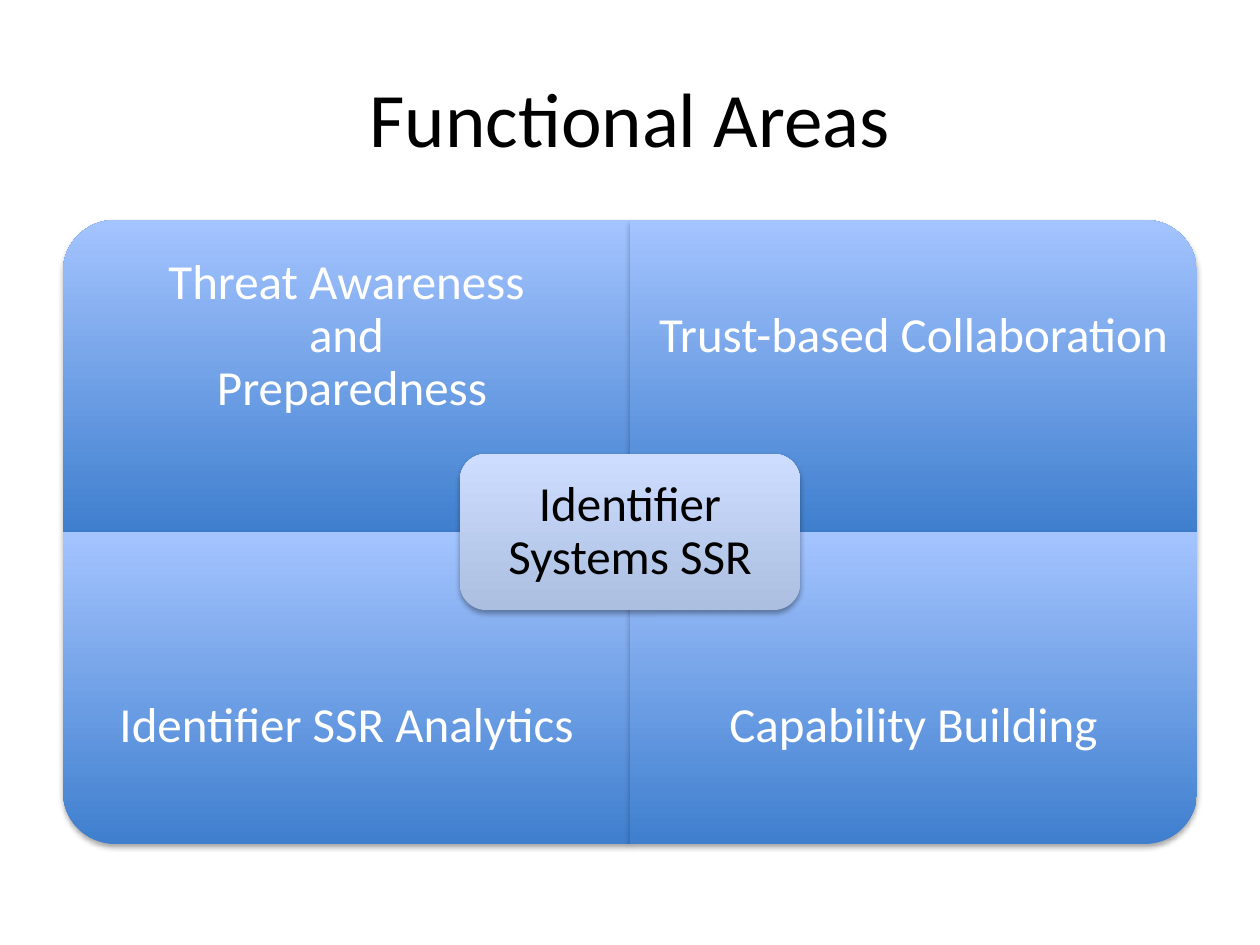
from lxml.etree import SubElement
from pptx import Presentation
from pptx.dml.color import RGBColor
from pptx.enum.shapes import MSO_SHAPE as Shape
from pptx.enum.text import MSO_ANCHOR as Anchor, PP_ALIGN as Align
from pptx.oxml.ns import qn
from pptx.util import Emu, Pt

PX = 914400 / 126
WHITE, BLACK = "FFFFFF", "000000"
QUADRANTS = [
    (0, 0, 270, ["Threat Awareness", "and", " Preparedness"]),
    (1, 0, 0, ["Trust-based Collaboration"]),
    (0, 1, 180, ["Identifier SSR Analytics"]),
    (1, 1, 90, ["Capability Building"]),
]


def px(length):
    """Turn pixels into EMU."""
    return Emu(round(length * PX))


def color(value):
    """Turn a hex string into a colour."""
    return RGBColor.from_string(value)


def add_text(slide, box, lines, size, ink, inset, spacing=1.0):
    """Place centred text, one run per line, in the box."""
    frame = slide.shapes.add_textbox(*map(px, box)).text_frame
    frame.word_wrap = True
    frame.vertical_anchor = Anchor.MIDDLE
    frame.margin_left = frame.margin_right = px(inset)
    frame.margin_top = frame.margin_bottom = px(inset)
    paragraph = frame.paragraphs[0]
    paragraph.alignment = Align.CENTER
    paragraph.line_spacing = spacing
    for index, line in enumerate(lines):
        if index:
            paragraph.add_line_break()
        run = paragraph.add_run()
        run.text = line
        run.font.name = "Calibri"
        run.font.size = Pt(size)
        run.font.color.rgb = color(ink)


def add_shadow(shape):
    """Give the shape a soft shadow below it."""
    shape.shadow.inherit = False
    effects = shape._element.spPr.find(qn("a:effectLst"))
    shadow = SubElement(effects, qn("a:outerShdw"), blurRad="40000",
                        dist="23000", dir="5400000", rotWithShape="0")
    tone = SubElement(shadow, qn("a:srgbClr"), val=BLACK)
    SubElement(tone, qn("a:alpha"), val="35000")


def add_panel(slide, kind, box, bottom, top, rotation=0):
    """Fill the box with a shaded panel, turned about its centre."""
    left, upper, width, height = box
    if rotation % 180:
        shift = (width - height) / 2
        box = left + shift, upper - shift, height, width
    shape = slide.shapes.add_shape(kind, *map(px, box))
    shape.rotation = rotation
    shape.line.fill.background()
    shape.fill.gradient()
    shape.fill.gradient_angle = 90
    for stop, tone in zip(shape.fill.gradient_stops, (bottom, top)):
        stop.color.rgb = color(tone)
    shape._element.spPr.find(qn("a:gradFill")).set("rotWithShape", "0")
    add_shadow(shape)


def add_matrix(slide, box):
    """Draw the four functional areas around their shared core."""
    left, top, width, height = box
    cell_width, cell_height = width // 2, height // 2
    text_height = cell_height * 3 // 4
    for column, row, rotation, lines in QUADRANTS:
        x, y = left + column * cell_width, top + row * cell_height
        add_panel(slide, Shape.ROUND_1_RECTANGLE,
                  (x, y, cell_width, cell_height), "3F7FCE", "A4C4FF", rotation)
        text_top = y + row * (cell_height - text_height)
        add_text(slide, (x, text_top, cell_width, text_height),
                 lines, 28, WHITE, 28, 0.9)
    core_width, core_height, inset = width * 3 // 10, height // 4, 8
    x = left + (width - core_width) // 2
    y = top + (height - core_height) // 2
    add_panel(slide, Shape.ROUNDED_RECTANGLE,
              (x, y, core_width, core_height), "ADBFE1", "CCDDFF")
    add_text(slide, (x + inset, y + inset, core_width - 2 * inset,
                     core_height - 2 * inset),
             ["Identifier Systems SSR"], 28, BLACK, 15, 0.9)


def main():
    """Build and save the slide."""
    presentation = Presentation()
    presentation.slide_width, presentation.slide_height = px(1260), px(945)
    slide = presentation.slides.add_slide(presentation.slide_layouts[6])
    add_text(slide, (63, 38, 1134, 158), ["Functional Areas"], 44, BLACK, 6)
    add_matrix(slide, (63, 220, 1134, 624))
    presentation.save("out.pptx")


if __name__ == "__main__":
    main()
